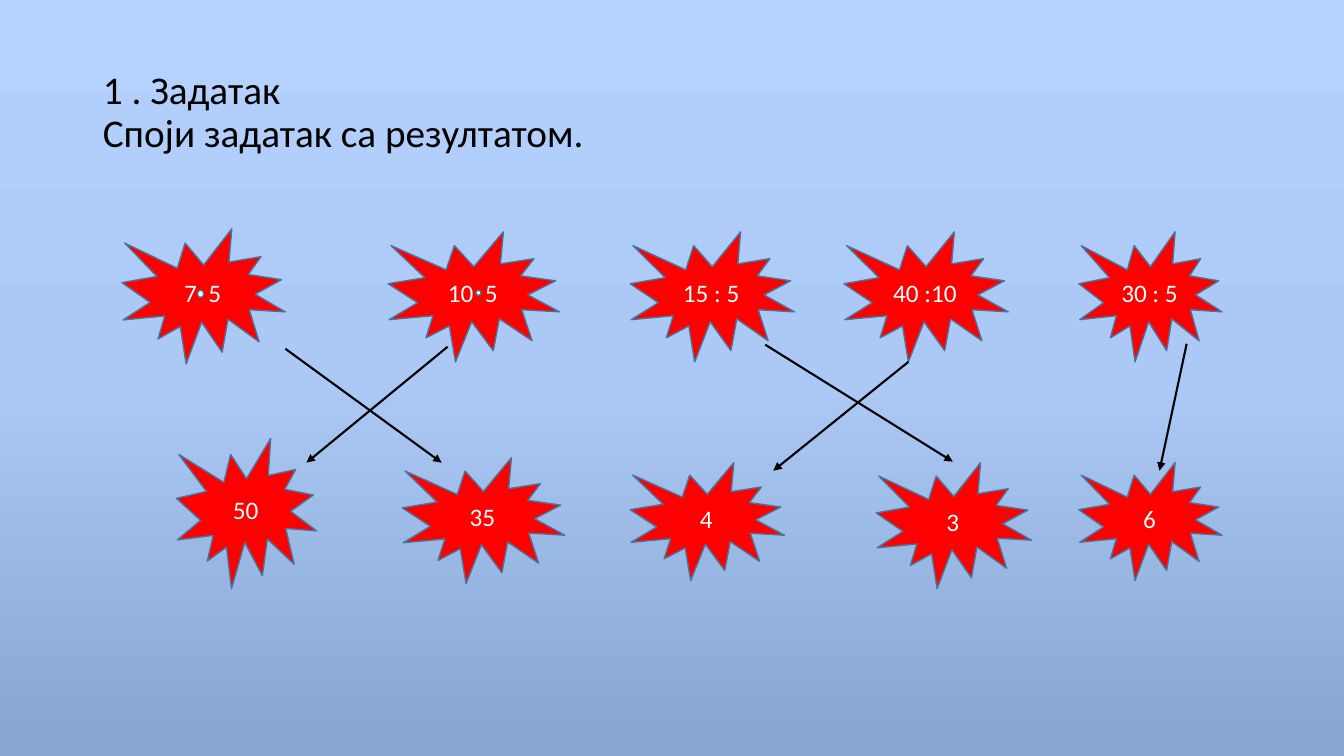
from copy import deepcopy
from dataclasses import dataclass

from lxml import etree
from pptx import Presentation
from pptx.dml.color import RGBColor
from pptx.enum import shapes, text
from pptx.oxml import ns
from pptx.util import Inches, Pt


@dataclass(frozen=True)
class Theme:
    font: str = "Calibri"
    title_size: int = 28
    star_size: int = 18
    ink: str = "000000"
    white: str = "FFFFFF"
    star: str = "FF0000"
    outline: str = "49749B"
    sky: tuple = ((0, "B5D1FD"), (0.5, "ACC9F5"), (1, "86A5D2"))


@dataclass(frozen=True)
class Mark:
    """A filled shape; the terms of its label are set apart by a wide space."""
    left: float
    top: float
    width: float
    height: float
    terms: tuple = ()


@dataclass(frozen=True)
class Arrow:
    x1: float
    y1: float
    x2: float
    y2: float


THEME = Theme()
WIDE_SPACE = "400"  # extra spacing that leaves room for a multiplication dot

TASKS = (
    Mark(1.21, 2.27, 1.62, 1.34, ("7", "5")),
    Mark(3.85, 2.3, 1.7, 1.29, ("10", "5")),
    Mark(6.25, 2.3, 1.63, 1.29, ("15 : 5",)),
    Mark(8.37, 2.3, 1.63, 1.29, ("40 :10",)),
    Mark(10.7, 2.3, 1.42, 1.29, ("30 : 5",)),
)
RESULTS = (
    Mark(1.75, 4.35, 1.39, 1.49, ("50",)),
    Mark(3.99, 4.54, 1.61, 1.25, ("35",)),
    Mark(6.25, 4.59, 1.53, 1.17, ("4",)),
    Mark(8.69, 4.59, 1.54, 1.25, ("3",)),
    Mark(10.7, 4.59, 1.42, 1.17, ("6",)),
)
ARROWS = (
    Arrow(2.83, 3.46, 4.38, 4.59),
    Arrow(4.44, 3.44, 3.04, 4.59),
    Arrow(7.59, 3.42, 9.45, 4.58),
    Arrow(9.01, 3.59, 7.67, 4.67),
    Arrow(11.77, 3.41, 11.5, 4.67),
)
DOTS = (Mark(1.96, 2.88, 0.06, 0.07), Mark(4.72, 2.88, 0.05, 0.05))


def rgb(value: str) -> RGBColor:
    return RGBColor.from_string(value)


def apply(target, values: dict) -> None:
    for name, value in values.items():
        setattr(target, name, value)


def format_run(r, size: int, color: str) -> None:
    apply(r.font, {"name": THEME.font, "size": Pt(size)})
    r.font.color.rgb = rgb(color)


def paint_background(s) -> None:
    fill = s.background.fill
    fill.gradient()
    fill.gradient_angle = 270
    first = fill.gradient_stops[0]._gs
    first.addnext(deepcopy(first))
    for stop, (position, color) in zip(fill.gradient_stops, THEME.sky):
        stop.position = position
        stop.color.rgb = rgb(color)


def write_title(s, *lines: str) -> None:
    sp = s.shapes.title
    apply(sp, {"left": Inches(0.92), "top": Inches(0.4),
               "width": Inches(11.5), "height": Inches(1.45)})
    tf = sp.text_frame
    apply(tf, {"word_wrap": True, "auto_size": text.MSO_AUTO_SIZE.NONE,
               "vertical_anchor": text.MSO_ANCHOR.MIDDLE})
    p = tf.paragraphs[0]
    p.text = "\v".join(lines)
    apply(p, {"alignment": text.PP_ALIGN.LEFT, "line_spacing": 0.9})
    for r in p.runs:
        format_run(r, THEME.title_size, THEME.ink)
    for br in p._p.findall(ns.qn("a:br")):
        etree.SubElement(br, ns.qn("a:rPr"), sz=str(THEME.title_size * 100))


def add_mark(s, mark: Mark, kind, color: str) -> None:
    box = (mark.left, mark.top, mark.width, mark.height)
    sp = s.shapes.add_shape(kind, *map(Inches, box))
    sp.shadow.inherit = False
    sp.fill.solid()
    sp.fill.fore_color.rgb = rgb(color)
    sp.line.color.rgb = rgb(THEME.outline)
    sp.line.width = Pt(1)
    sp.text_frame.vertical_anchor = text.MSO_ANCHOR.MIDDLE
    p = sp.text_frame.paragraphs[0]
    p.alignment = text.PP_ALIGN.CENTER
    for i, term in enumerate(mark.terms):
        for piece in ((" ", term) if i else (term,)):
            r = p.add_run()
            r.text = piece
            format_run(r, THEME.star_size, THEME.white)
            if piece == " ":
                r._r.get_or_add_rPr().set("spc", WIDE_SPACE)


def add_arrow(s, arrow: Arrow) -> None:
    ends = (arrow.x1, arrow.y1, arrow.x2, arrow.y2)
    line = s.shapes.add_connector(shapes.MSO_CONNECTOR.STRAIGHT,
                                  *map(Inches, ends))
    line.line.color.rgb = rgb(THEME.ink)
    line.line.width = Pt(1.5)
    etree.SubElement(line.line._get_or_add_ln(), ns.qn("a:tailEnd"),
                     type="triangle")
    etree.SubElement(line._element.spPr, ns.qn("a:effectLst"))


def main() -> None:
    prs = Presentation()
    apply(prs, {"slide_width": Inches(13.33), "slide_height": Inches(7.5)})
    s = prs.slides.add_slide(prs.slide_layouts[5])

    # Background and title
    paint_background(s)
    write_title(s, "1 . Задатак", "Споји задатак са резултатом.")

    # Tasks above, results below
    for mark in TASKS + RESULTS:
        add_mark(s, mark, shapes.MSO_SHAPE.EXPLOSION1, THEME.star)

    # Arrows from task to result
    for arrow in ARROWS:
        add_arrow(s, arrow)

    # Multiplication dots
    for dot in DOTS:
        add_mark(s, dot, shapes.MSO_SHAPE.FLOWCHART_CONNECTOR, THEME.white)

    prs.save("out.pptx")


if __name__ == "__main__":
    main()
